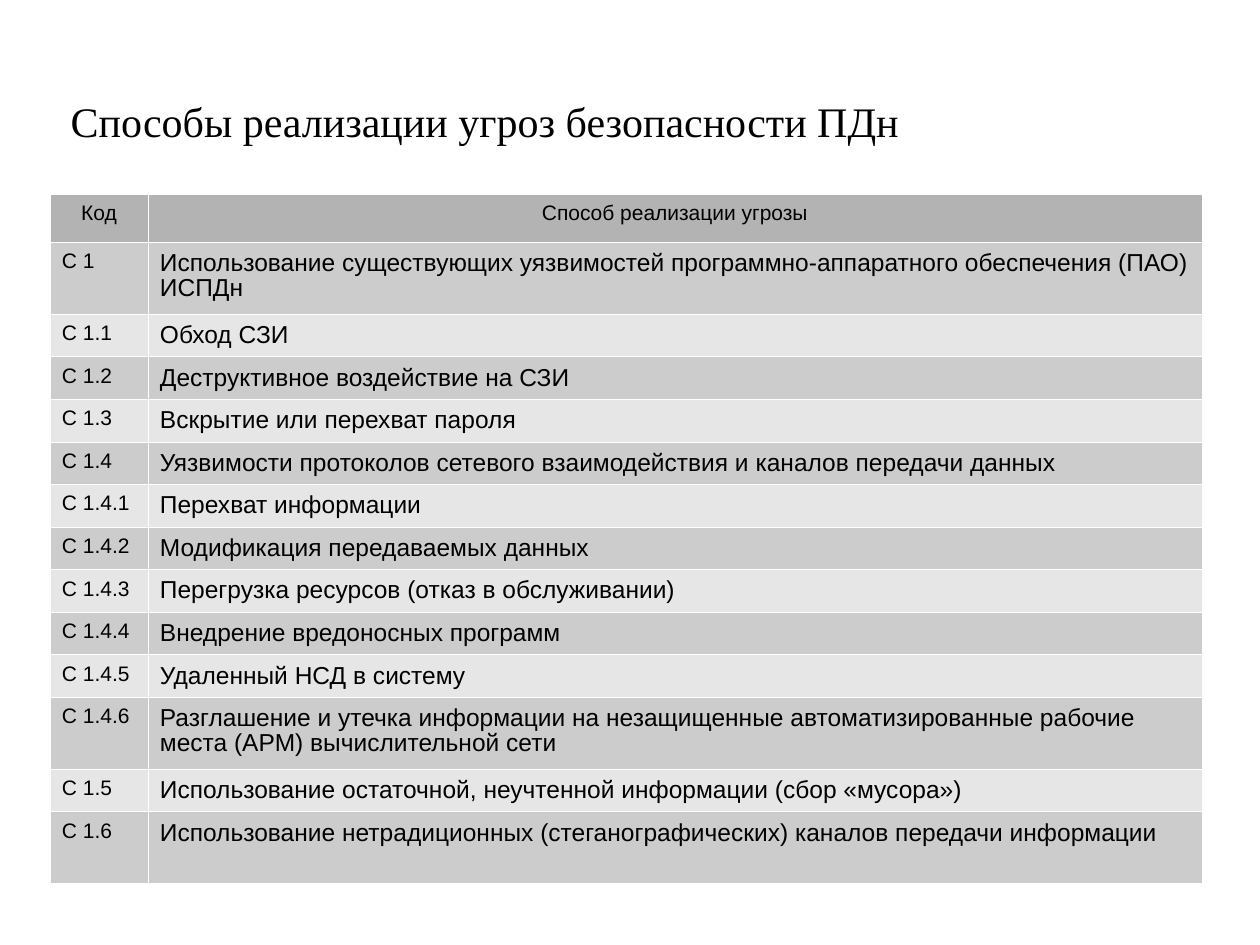
from dataclasses import dataclass

from lxml.etree import SubElement
from pptx import Presentation
from pptx.dml.color import RGBColor
from pptx.enum.text import MSO_ANCHOR, MSO_AUTO_SIZE, PP_ALIGN
from pptx.oxml.ns import qn
from pptx.util import Emu, Pt

PX = 914400 // 126


@dataclass(frozen=True)
class Theme:
    text: str = "000000"
    border: str = "FFFFFF"
    header: str = "B3B3B3"
    bands: tuple = ("CCCCCC", "E6E6E6")
    title_font: str = "Times New Roman"
    table_font: str = "Arial"
    title_size: int = 24
    code_size: int = 12
    method_size: int = 14
    border_width: float = 0.06
    line_spacing: float = 0.89


THEME = Theme()

TITLE = "Способы реализации угроз безопасности ПДн"
HEADINGS = ("Код", "Способ реализации угрозы")
METHODS = [
    ("С 1", "Использование существующих уязвимостей программно-аппаратного обеспечения (ПАО) ИСПДн"),
    ("С 1.1", "Обход СЗИ"),
    ("С 1.2", "Деструктивное воздействие на СЗИ"),
    ("С 1.3", "Вскрытие или перехват пароля"),
    ("С 1.4", "Уязвимости протоколов сетевого взаимодействия и каналов передачи данных"),
    ("С 1.4.1", "Перехват информации"),
    ("С 1.4.2", "Модификация передаваемых данных"),
    ("С 1.4.3", "Перегрузка ресурсов (отказ в обслуживании)"),
    ("С 1.4.4", "Внедрение вредоносных программ"),
    ("С 1.4.5", "Удаленный НСД в систему"),
    ("С 1.4.6", "Разглашение и утечка информации на незащищенные автоматизированные рабочие места (АРМ) вычислительной сети"),
    ("С 1.5", "Использование остаточной, неучтенной информации (сбор «мусора»)"),
    ("С 1.6", "Использование нетрадиционных (стеганографических) каналов передачи информации"),
]

TITLE_BOX = (58, 89, 1123, 89)
TABLE_BOX = (50, 194, 1152, 690)
CODE_WIDTH = 98
HEADER_HEIGHT = 48
TALL_HEIGHT = 72
TALL_CODES = {"С 1", "С 1.4.6", "С 1.6"}
CELL_MARGINS = {
    "margin_left": Emu(12 * PX),
    "margin_top": Emu(10 * PX),
    "margin_right": Emu(12 * PX),
    "margin_bottom": Emu(6 * PX),
}


def apply_format(target, values):
    for name, value in values.items():
        setattr(target, name, value)


def write_text(paragraph, text, font_name, size, alignment, line_spacing):
    paragraph.text = text
    apply_format(paragraph, {
        "alignment": alignment,
        "line_spacing": line_spacing,
        "space_before": Pt(0),
    })
    apply_format(paragraph.font, {"name": font_name, "size": Pt(size), "bold": False})
    paragraph.font.color.rgb = RGBColor.from_string(THEME.text)


def add_borders(cell):
    properties = cell._tc.get_or_add_tcPr()
    for side in ("a:lnL", "a:lnR", "a:lnT", "a:lnB"):
        line = SubElement(properties, qn(side), w=str(Pt(THEME.border_width)))
        fill = SubElement(line, qn("a:solidFill"))
        SubElement(fill, qn("a:srgbClr"), val=THEME.border)


def fill_cell(cell, text, size, alignment, color):
    apply_format(cell, CELL_MARGINS)
    add_borders(cell)
    cell.fill.solid()
    cell.fill.fore_color.rgb = RGBColor.from_string(color)
    write_text(cell.text_frame.paragraphs[0], text, THEME.table_font, size,
               alignment, THEME.line_spacing)


def place_title(slide, box):
    title = slide.shapes.title
    left, top, width, height = (Emu(length * PX) for length in box)
    apply_format(title, {"left": left, "top": top, "width": width, "height": height})
    apply_format(title.text_frame, {
        "vertical_anchor": MSO_ANCHOR.TOP,
        "auto_size": MSO_AUTO_SIZE.NONE,
        "word_wrap": True,
    })
    write_text(title.text_frame.paragraphs[0], TITLE, THEME.title_font,
               THEME.title_size, PP_ALIGN.LEFT, 1.0)


def place_methods_table(slide, box):
    left, top, width, height = (Emu(length * PX) for length in box)
    frame = slide.shapes.add_table(len(METHODS) + 1, len(HEADINGS), left, top, width, height)
    table = frame.table
    apply_format(table, {"first_row": False, "horz_banding": False})
    table.columns[0].width = Emu(CODE_WIDTH * PX)
    table.columns[1].width = Emu(width - CODE_WIDTH * PX)

    tall_total = HEADER_HEIGHT + TALL_HEIGHT * len(TALL_CODES)
    short_height = (height - tall_total * PX) // (len(METHODS) - len(TALL_CODES))
    table.rows[0].height = Emu(HEADER_HEIGHT * PX)
    for column, heading in enumerate(HEADINGS):
        fill_cell(table.cell(0, column), heading, THEME.code_size, PP_ALIGN.CENTER, THEME.header)

    sizes = (THEME.code_size, THEME.method_size)
    for index, method in enumerate(METHODS):
        row = index + 1
        is_tall = method[0] in TALL_CODES
        table.rows[row].height = Emu(TALL_HEIGHT * PX if is_tall else short_height)
        color = THEME.bands[index % len(THEME.bands)]
        for column, (text, size) in enumerate(zip(method, sizes)):
            fill_cell(table.cell(row, column), text, size, PP_ALIGN.LEFT, color)


def main():
    presentation = Presentation()
    apply_format(presentation, {"slide_width": Emu(1260 * PX), "slide_height": Emu(945 * PX)})
    slide = presentation.slides.add_slide(presentation.slide_layouts[5])
    place_title(slide, TITLE_BOX)
    place_methods_table(slide, TABLE_BOX)
    presentation.save("out.pptx")


if __name__ == "__main__":
    main()
